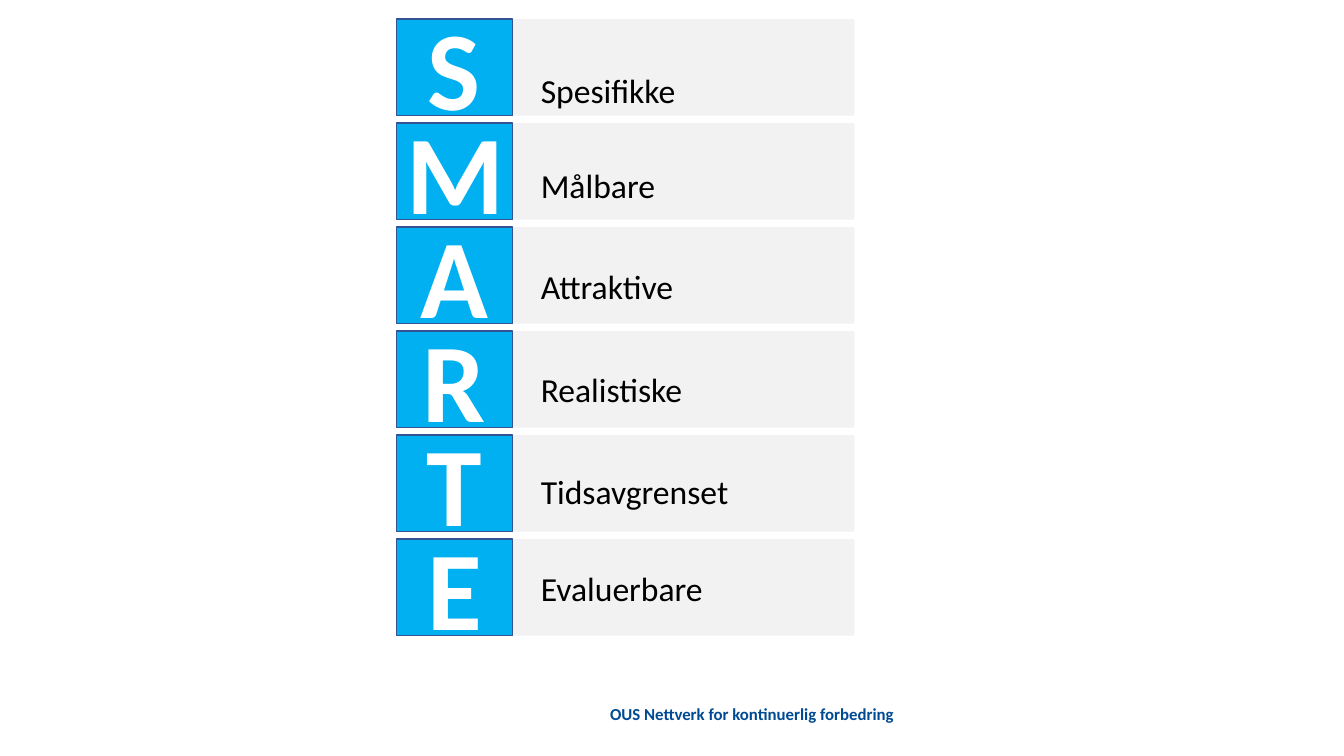
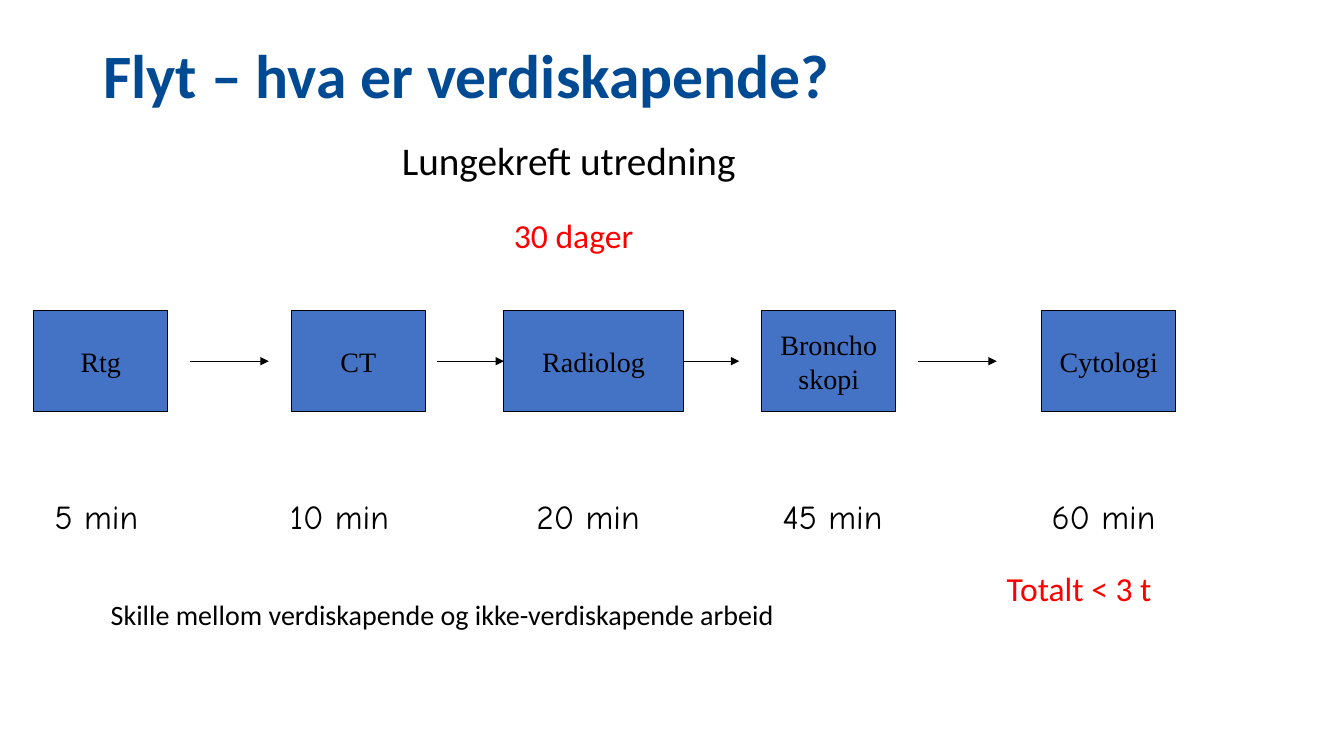
from lxml import etree
from pptx import Presentation
from pptx.dml.color import RGBColor
from pptx.enum.shapes import MSO_CONNECTOR, MSO_SHAPE
from pptx.enum.text import MSO_ANCHOR, PP_ALIGN
from pptx.oxml.ns import qn
from pptx.util import Inches, Pt

RECTANGLE = MSO_SHAPE.RECTANGLE
STRAIGHT = MSO_CONNECTOR.STRAIGHT
TOP, MIDDLE = MSO_ANCHOR.TOP, MSO_ANCHOR.MIDDLE
LEFT, CENTER = PP_ALIGN.LEFT, PP_ALIGN.CENTER

SLIDE_WIDTH, SLIDE_HEIGHT = Inches(13.33), Inches(7.5)
COLUMN, ROW = SLIDE_WIDTH / 120, SLIDE_HEIGHT / 90
TITLE_ONLY, BLANK = 5, 6

BODY_FONT, NODE_FONT, TIME_FONT = "Calibri", "Times New Roman", "Comic Neue"
BLACK, WHITE, RED = "000000", "FFFFFF", "FF0000"
NAVY, SKY, TILE_EDGE = "004A93", "00B0F0", "325491"
PANEL_GREY, NODE_BLUE = "F2F2F2", "4472C4"

GOALS = [("Spesifikke", 7.7), ("Målbare", 19), ("Attraktive", 31.1),
         ("Realistiske", 43.3), ("Tidsavgrenset", 55.5), ("Evaluerbare", 67)]
GOAL_LEFT, GOAL_TOP, GOAL_PITCH, GOAL_HEIGHT = 35.4, 2.28, 12.38, 11.5
TILE_WIDTH, PANEL_WIDTH = 10.35, 40.9
LETTER_RISE, LETTER_HEIGHT = 2.85, 16.7

STEPS = [("Rtg", 3, 12), ("CT", 26, 12), ("Radiolog", 45, 16),
         ("Broncho\nskopi", 68, 12), ("Cytologi", 93, 12)]
ARROWS = [(17, 24), (39, 45), (61, 66), (82, 89)]
TIMES = [("5 min", 4), ("10 min", 25), ("20 min", 47), ("45 min", 69), ("60 min", 93)]
STEP_TOP, STEP_HEIGHT, TIME_TOP = 37, 12, 58.5


def color(value):
    """Return the colour for a hex string."""
    return RGBColor.from_string(value)


def grid(left, top, width, height):
    """Turn grid columns and rows into slide lengths."""
    return (round(left * COLUMN), round(top * ROW),
            round(width * COLUMN), round(height * ROW))


def write(shape, text, size, ink=BLACK, font=BODY_FONT, bold=False,
          align=LEFT, anchor=TOP, wrap=True):
    """Put formatted text into a shape."""
    frame = shape.text_frame
    frame.text = text
    frame.word_wrap = wrap
    frame.vertical_anchor = anchor
    for para in frame.paragraphs:
        para.alignment = align
        for span in para.runs:
            span.font.name = font
            span.font.size = Pt(size)
            span.font.bold = bold
            span.font.color.rgb = color(ink)


def add_text(slide, area, text, size, **style):
    """Add a text box on the grid."""
    box = slide.shapes.add_textbox(*grid(*area))
    write(box, text, size, **style)


def add_box(slide, area, fill, edge=None, weight=0.75):
    """Add a flat rectangle on the grid."""
    box = slide.shapes.add_shape(RECTANGLE, *grid(*area))
    box.shadow.inherit = False
    box.fill.solid()
    box.fill.fore_color.rgb = color(fill)
    if edge:
        box.line.color.rgb = color(edge)
        box.line.width = Pt(weight)
    else:
        box.line.fill.background()
    return box


def add_arrow(slide, start, end, row):
    """Add a horizontal arrow between two columns."""
    left, top, width, _ = grid(start, row, end - start, 0)
    arrow = slide.shapes.add_connector(STRAIGHT, left, top, left + width, top)
    arrow.line.color.rgb = color(BLACK)
    arrow.line.width = Pt(0.75)
    etree.SubElement(arrow.line._get_or_add_ln(), qn("a:tailEnd"), type="triangle")
    etree.SubElement(arrow._element.spPr, qn("a:effectLst"))


def add_title(slide, text):
    """Place and style the slide title."""
    title = slide.shapes.title
    title.left, title.top, title.width, title.height = grid(8.3, 4.8, 103.5, 9)
    write(title, text, 44, ink=NAVY, bold=True, anchor=MIDDLE)
    title.text_frame.paragraphs[0].line_spacing = 0.9


def add_footer(slide, text):
    """Add the footer line."""
    add_text(slide, (36.6, 82.6, 61.1, 4.8), text, 12,
             ink=NAVY, bold=True, align=CENTER, anchor=MIDDLE)


def add_goal(slide, index, word, word_top):
    """Add one acronym row: panel, initial tile and word."""
    top = GOAL_TOP + index * GOAL_PITCH
    add_box(slide, (GOAL_LEFT, top, PANEL_WIDTH, GOAL_HEIGHT), PANEL_GREY)
    add_box(slide, (GOAL_LEFT, top, TILE_WIDTH, GOAL_HEIGHT), SKY, TILE_EDGE, 1)
    add_text(slide, (GOAL_LEFT, top - LETTER_RISE, TILE_WIDTH, LETTER_HEIGHT),
             word[0], 80, ink=WHITE, bold=True, align=CENTER, anchor=MIDDLE)
    add_text(slide, (47.4, word_top, 26, 5.8), word, 24)


def build_goals(deck):
    """Build the acronym slide."""
    slide = deck.slides.add_slide(deck.slide_layouts[BLANK])
    add_footer(slide, "OUS Nettverk for kontinuerlig forbedring")
    for index, (word, word_top) in enumerate(GOALS):
        add_goal(slide, index, word, word_top)


def build_flow(deck):
    """Build the patient flow slide."""
    slide = deck.slides.add_slide(deck.slide_layouts[TITLE_ONLY])
    add_title(slide, "Flyt – hva er verdiskapende?")
    for name, left, width in STEPS:
        node = add_box(slide, (left, STEP_TOP, width, STEP_HEIGHT), NODE_BLUE, BLACK)
        write(node, name, 20, font=NODE_FONT, align=CENTER, anchor=MIDDLE, wrap=False)
    for start, end in ARROWS:
        add_arrow(slide, start, end, STEP_TOP + STEP_HEIGHT / 2)
    for time, left in TIMES:
        add_text(slide, (left, TIME_TOP, 18, 6), time, 24, font=TIME_FONT)
    add_text(slide, (35, 15.6, 53, 6.8), "Lungekreft utredning", 28)
    add_text(slide, (45, 25, 24, 6), "30 dager", 24, ink=RED)
    add_text(slide, (89, 67, 24, 6), "Totalt < 3 t", 24, ink=RED)
    add_text(slide, (9, 70.6, 79, 5.3),
             "Skille mellom verdiskapende og ikke-verdiskapende arbeid", 20)


def main():
    """Build and save the deck."""
    deck = Presentation()
    deck.slide_width, deck.slide_height = SLIDE_WIDTH, SLIDE_HEIGHT
    build_goals(deck)
    build_flow(deck)
    deck.save("out.pptx")


if __name__ == "__main__":
    main()
